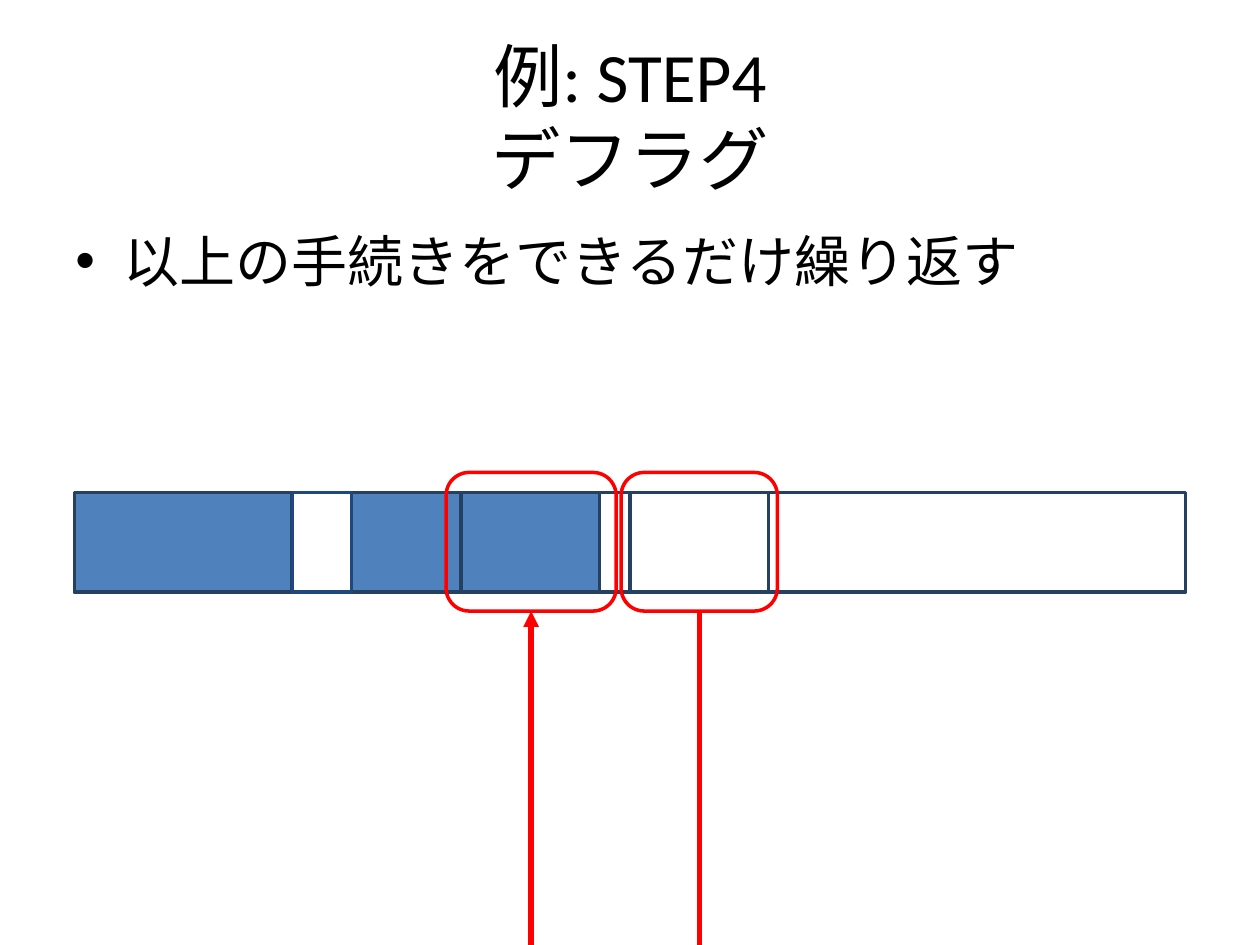
from dataclasses import dataclass

import pptx
import pptx.dml.color
import pptx.enum.shapes
import pptx.enum.text
import pptx.oxml
import pptx.oxml.ns
import pptx.presentation
import pptx.shapes.autoshape
import pptx.slide
import pptx.util
from pptx.util import Inches

Shape = pptx.enum.shapes.MSO_SHAPE
Align = pptx.enum.text.PP_ALIGN
Anchor = pptx.enum.text.MSO_ANCHOR


@dataclass(frozen=True)
class Theme:
    font: str = "Calibri"
    title_size: float = 39.6
    body_size: float = 32
    text: str = "000000"
    used: str = "4F81BD"
    free: str = "FFFFFF"
    edge: str = "254061"
    gap_edge: str = "1F497D"
    accent: str = "FF0000"
    outline: float = 2
    arrow: float = 3


@dataclass(frozen=True)
class Block:
    """One stretch of memory, from left to right edge in inches."""
    left: float
    right: float
    fill: str
    edge: str


@dataclass(frozen=True)
class Marker:
    """A rounded frame around a block, with a line down to the page edge."""
    left: float
    width: float
    arrowhead: bool


THEME = Theme()
PAGE_HEIGHT = 7.5
MEMORY_TOP, MEMORY_HEIGHT = 3.91, 0.79
MARKER_TOP, MARKER_HEIGHT = 3.75, 1.1

BLOCKS = [
    Block(0.59, 2.32, THEME.used, THEME.edge),
    Block(2.79, 3.66, THEME.used, THEME.edge),
    Block(4.76, 5.0, THEME.free, THEME.edge),
    Block(6.1, 9.41, THEME.free, THEME.edge),
    Block(2.32, 2.79, THEME.free, THEME.gap_edge),
    Block(5.0, 6.1, THEME.free, THEME.edge),
    Block(3.66, 4.76, THEME.used, THEME.edge),
]
MARKERS = [Marker(4.93, 1.24, False), Marker(3.54, 1.35, True)]


def color(value: str) -> pptx.dml.color.RGBColor:
    return pptx.dml.color.RGBColor.from_string(value)


def add_text(page: pptx.slide.Slide, text: str, left: float, top: float,
             width: float, height: float, *, size: float,
             align: Align = Align.LEFT, anchor: Anchor = Anchor.TOP,
             bullet: bool = False, space_before: float = 0,
             line_spacing: float = 1.0) -> None:
    box = page.shapes.add_textbox(
        Inches(left), Inches(top), Inches(width), Inches(height))
    frame = box.text_frame
    frame.word_wrap = True
    frame.vertical_anchor = anchor
    para = frame.paragraphs[0]
    para.alignment = align
    para.space_before = pptx.util.Pt(space_before)
    para.line_spacing = line_spacing
    for index, line in enumerate(text.split("\n")):
        if index:
            para.add_line_break()
        span = para.add_run()
        span.text = line
        span.font.name = THEME.font
        span.font.size = pptx.util.Pt(size)
        span.font.color.rgb = color(THEME.text)
    if bullet:
        indent = Inches(0.38)
        properties = para._p.get_or_add_pPr()
        properties.set("marL", str(indent))
        properties.set("indent", str(-indent))
        for tag, name, value in (("a:buFont", "typeface", "Arial"),
                                 ("a:buChar", "char", "•")):
            mark = pptx.oxml.xmlchemy.OxmlElement(tag)
            mark.set(name, value)
            properties.append(mark)


def add_frame(page: pptx.slide.Slide, kind: Shape, left: float, top: float,
              width: float, height: float, edge: str,
              fill: str | None = None) -> pptx.shapes.autoshape.Shape:
    shape = page.shapes.add_shape(
        kind, Inches(left), Inches(top), Inches(width), Inches(height))
    shape.shadow.inherit = False
    if fill:
        shape.fill.solid()
        shape.fill.fore_color.rgb = color(fill)
    else:
        shape.fill.background()
    shape.line.color.rgb = color(edge)
    shape.line.width = pptx.util.Pt(THEME.outline)
    return shape


def add_marker(page: pptx.slide.Slide, marker: Marker) -> None:
    add_frame(page, Shape.ROUNDED_RECTANGLE, marker.left, MARKER_TOP,
              marker.width, MARKER_HEIGHT, THEME.accent)
    center = Inches(marker.left + marker.width / 2)
    line = page.shapes.add_connector(
        pptx.enum.shapes.MSO_CONNECTOR.STRAIGHT,
        center, Inches(PAGE_HEIGHT), center, Inches(MARKER_TOP + MARKER_HEIGHT))
    line.line.color.rgb = color(THEME.accent)
    line.line.width = pptx.util.Pt(THEME.arrow)
    if marker.arrowhead:
        head = pptx.oxml.xmlchemy.OxmlElement("a:tailEnd")
        head.set("type", "triangle")
        line.line._get_or_add_ln().append(head)
    line._element.spPr.append(pptx.oxml.xmlchemy.OxmlElement("a:effectLst"))


def main() -> None:
    deck = pptx.Presentation()
    deck.slide_width, deck.slide_height = Inches(10), Inches(PAGE_HEIGHT)
    page = deck.slides.add_slide(deck.slide_layouts[6])
    add_text(page, "例: STEP4\nデフラグ", 0.5, 0.3, 9, 1.25,
             size=THEME.title_size, align=Align.CENTER, anchor=Anchor.MIDDLE)
    add_text(page, "以上の手続きをできるだけ繰り返す", 0.5, 1.75, 9, 1.61,
             size=THEME.body_size, bullet=True,
             space_before=0.2 * THEME.body_size)
    for block in BLOCKS:
        add_frame(page, Shape.RECTANGLE, block.left, MEMORY_TOP,
                  block.right - block.left, MEMORY_HEIGHT,
                  block.edge, block.fill)
    for marker in MARKERS:
        add_marker(page, marker)
    deck.save("out.pptx")


if __name__ == "__main__":
    main()
